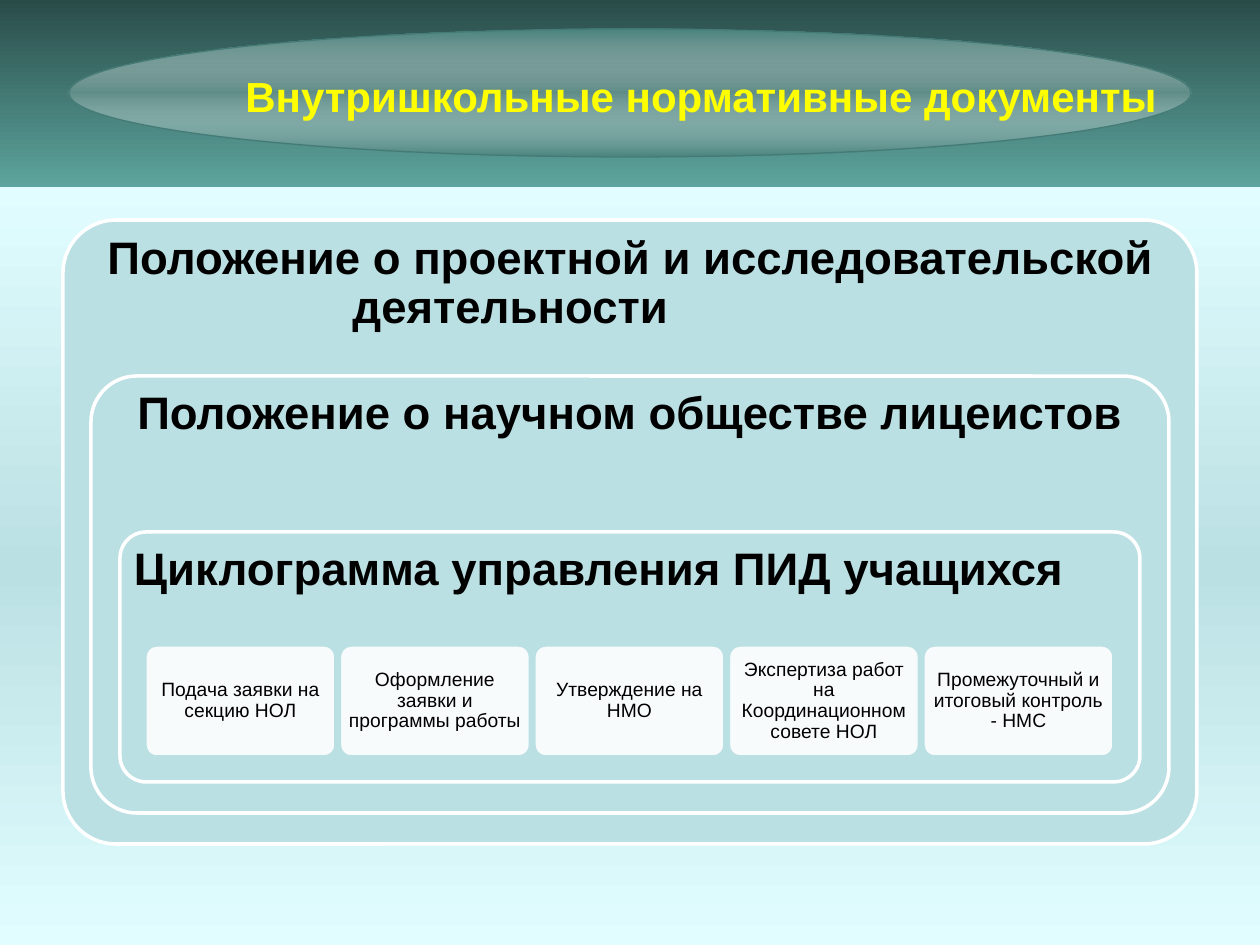
from dataclasses import dataclass

from lxml.etree import SubElement
from pptx import Presentation
from pptx.dml.color import RGBColor
from pptx.enum.shapes import MSO_SHAPE as Kind
from pptx.enum.text import MSO_ANCHOR as Anchor, MSO_AUTO_SIZE as Fit, PP_ALIGN as Align
from pptx.oxml.ns import qn
from pptx.util import Pt

SCALE = 914400 / 126
CURVE = 0.29  # share of a corner radius that insets the text


@dataclass(frozen=True)
class Theme:
    font: str = "Arial"
    dark: str = "2A4C49"
    teal: str = "5CA49D"
    oval: str = "49837D"
    rim: str = "457B76"
    pale: str = "E1FDFF"
    panel: str = "BBE0E3"
    white: str = "FFFFFF"
    black: str = "000000"
    yellow: str = "FFFF00"
    title: int = 24
    head: int = 26
    small: int = 11


T = Theme()

# Left, top, width, height, corner, text, alignment
PANELS = [
    (63, 220, 1134, 624, 0.085,
     "Положение о проектной и исследовательской деятельности", Align.LEFT),
    (91, 376, 1078, 437, 0.105, "Положение о научном обществе лицеистов", Align.CENTER),
    (120, 532, 1020, 250, 0.105, "Циклограмма управления ПИД учащихся", Align.LEFT),
]
CARDS = [
    "Подача заявки на секцию НОЛ",
    "Оформление заявки и программы работы",
    "Утверждение на НМО",
    "Экспертиза работ на Координационном совете НОЛ",
    "Промежуточный и итоговый контроль - НМС",
]


def px(n):
    return round(n * SCALE)


def rgb(code):
    return RGBColor.from_string(code)


def fade(node, share):
    SubElement(node, qn("a:alpha"), val=str(share * 1000))


def add_shape(slide, kind, box, line=None, width=1):
    shape = slide.shapes.add_shape(kind, *map(px, box))
    shape.shadow.inherit = False
    if line:
        shape.line.color.rgb = rgb(line)
        shape.line.width = Pt(width)
    else:
        shape.line.fill.background()
    return shape


def blend(shape, stops):
    """Fill from top to bottom; a stop is (place, colour, opacity)."""
    shape.fill.gradient()
    shape.fill.gradient_angle = 270
    group = shape.element.spPr.find(".//" + qn("a:gsLst"))
    for old in list(group):
        group.remove(old)
    for place, code, share in stops:
        stop = SubElement(group, qn("a:gs"), pos=str(place * 1000))
        color = SubElement(stop, qn("a:srgbClr"), val=code)
        if share < 100:
            fade(color, share)


def write(frame, text, size, color, align, bold=False, inset=0, anchor=Anchor.MIDDLE):
    frame.text = text
    frame.word_wrap = True
    frame.auto_size = Fit.NONE
    frame.vertical_anchor = anchor
    frame.margin_left = frame.margin_right = px(inset)
    frame.margin_top = frame.margin_bottom = px(inset)
    para = frame.paragraphs[0]
    para.alignment = align
    font = para.runs[0].font
    font.name, font.size, font.bold = T.font, Pt(size), bold
    font.color.rgb = rgb(color)
    return para


def add_round(slide, box, corner, fill, line, pad):
    """Return a rounded box and the margin that keeps its text at pad."""
    shape = add_shape(slide, Kind.ROUNDED_RECTANGLE, box, line, 2)
    shape.adjustments[0] = corner
    shape.fill.solid()
    shape.fill.fore_color.rgb = rgb(fill)
    return shape, max(0, pad - CURVE * corner * box[3])


def add_panel(slide, box, corner, text, align):
    shape, inset = add_round(slide, box, corner, T.panel, T.white, 14)
    para = write(shape.text_frame, text, T.head, T.black, align, True, inset, Anchor.TOP)
    para.line_spacing = 0.9
    return para


def add_card(slide, box, text):
    shape, inset = add_round(slide, box, 0.105, T.white, T.panel, 6)
    fade(shape.element.spPr.find(qn("a:solidFill"))[0], 90)
    para = write(shape.text_frame, text, T.small, T.black, Align.CENTER, inset=inset)
    para.line_spacing = 0.9


def add_title(slide, text):
    title = slide.shapes.title
    title.left, title.top, title.width, title.height = map(px, (221, 56, 960, 80))
    write(title.text_frame, text, T.title, T.yellow, Align.CENTER, True)
    # Bring the title in front of the banner
    title.element.getparent().append(title.element)


def main():
    deck = Presentation()
    deck.slide_width, deck.slide_height = px(1260), px(945)
    slide = deck.slides.add_slide(deck.slide_layouts[5])

    # Banner and backdrop
    band = add_shape(slide, Kind.RECTANGLE, (0, 0, 1260, 187))
    blend(band, [(0, T.dark, 100), (100, T.teal, 100)])
    oval = add_shape(slide, Kind.OVAL, (69, 29, 1122, 128), T.rim, 0.75)
    blend(oval, [(0, T.oval, 100), (50, T.white, 15), (100, T.oval, 100)])
    back = add_shape(slide, Kind.RECTANGLE, (0, 187, 1260, 758))
    blend(back, [(0, T.pale, 100), (50, T.panel, 100), (100, T.pale, 100)])
    add_title(slide, "Внутришкольные нормативные документы")

    # Nested panels
    heads = [add_panel(slide, row[:4], *row[4:]) for row in PANELS]
    # The first heading starts its second line further right
    props = heads[0]._p.get_or_add_pPr()
    props.set("marL", str(px(274)))
    props.set("indent", str(px(-245)))

    # Row of cards
    left, right, wide = 145, 1114, 191
    step = (right - left - wide) / (len(CARDS) - 1)
    for i, text in enumerate(CARDS):
        add_card(slide, (left + i * step, 645, wide, 112), text)

    deck.save("out.pptx")


if __name__ == "__main__":
    main()
